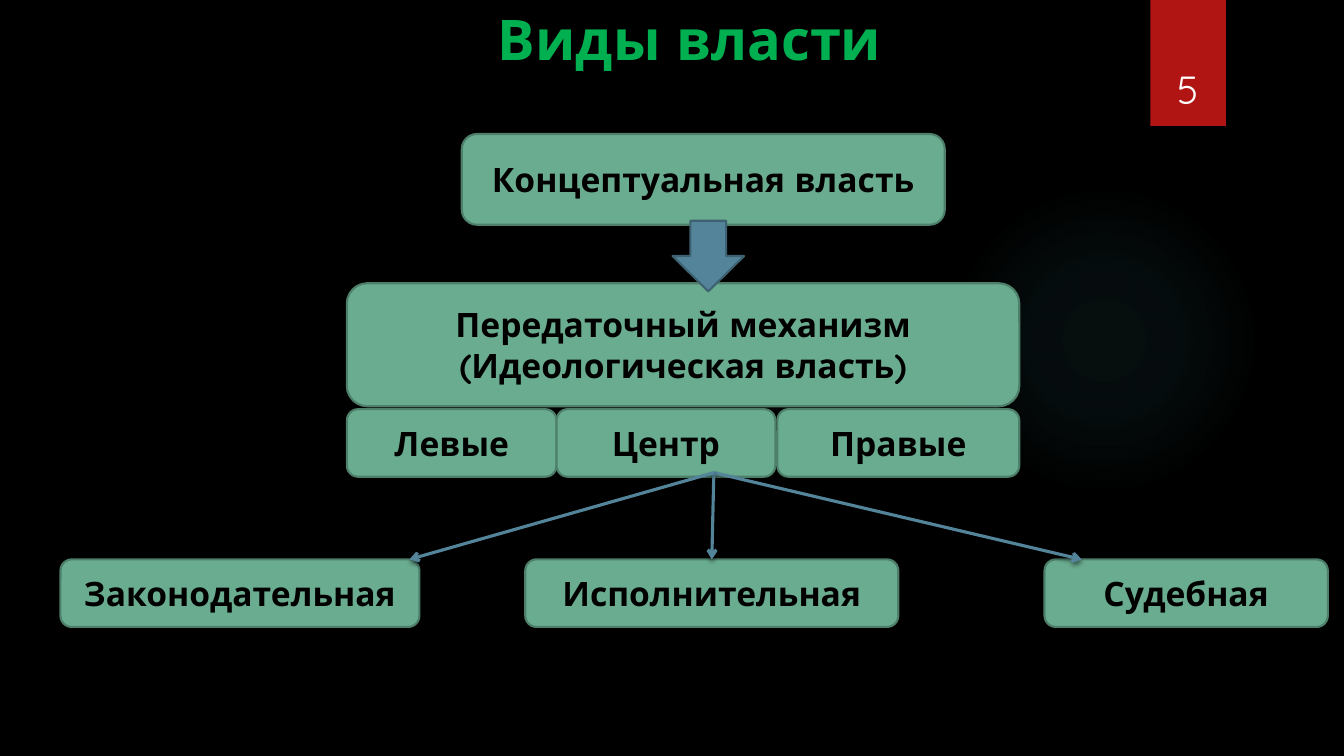
from lxml.etree import SubElement
from pptx import Presentation
from pptx.dml.color import RGBColor
from pptx.enum.shapes import MSO_CONNECTOR, MSO_SHAPE
from pptx.enum.text import MSO_ANCHOR, MSO_AUTO_SIZE, PP_ALIGN
from pptx.oxml import parse_xml
from pptx.oxml.ns import nsdecls, qn
from pptx.util import Inches, Pt

COLORS = {
    "background": "000000", "glow": "50B9C1", "ribbon": "B01513",
    "box": "6AAC90", "box_line": "4E7F6B", "arrow": "54849A",
    "arrow_line": "3E6272", "title": "00B050", "dark": "000000",
    "light": "FFFFFF",
}
SHADOW = (
    f'<a:effectLst {nsdecls("a")}>'
    '<a:outerShdw blurRad="38100" dist="25400" dir="5400000" rotWithShape="0">'
    '<a:srgbClr val="000000"><a:alpha val="45000"/></a:srgbClr>'
    '</a:outerShdw></a:effectLst>'
)


def add_block(kind, place, fill, line=None):
    block = page.shapes.add_shape(kind, *map(Inches, place))
    block.shadow.inherit = False
    block.fill.solid()
    block.fill.fore_color.rgb = RGBColor.from_string(COLORS[fill])
    if line:
        block.line.color.rgb = RGBColor.from_string(COLORS[line])
        block.line.width = Pt(1.5)
    else:
        block.line.fill.background()
    return block


def write(box, text, size, color, bold=True, anchor=MSO_ANCHOR.MIDDLE):
    frame = box.text_frame
    frame.word_wrap = True
    frame.vertical_anchor = anchor
    para = frame.paragraphs[0]
    para.alignment = PP_ALIGN.CENTER
    span = para.add_run()
    span.text = text
    style = {"name": "Quicksand", "size": Pt(size), "bold": bold}
    for name, value in style.items():
        setattr(span.font, name, value)
    span.font.color.rgb = RGBColor.from_string(COLORS[color])


deck = Presentation()
deck.slide_width, deck.slide_height = Inches(13.33), Inches(7.5)
page = deck.slides.add_slide(deck.slide_layouts[6])
page.background.fill.solid()
page.background.fill.fore_color.rgb = RGBColor.from_string(COLORS["background"])

# Background glow and page number ribbon
glow = add_block(MSO_SHAPE.OVAL, (9.41, 1.83, 3.08, 3.08), "glow")
stops = "".join(
    f'<a:gs pos="{position * 1000}"><a:srgbClr val="{COLORS["glow"]}">'
    f'<a:alpha val="{opacity * 1000}"/></a:srgbClr></a:gs>'
    for position, opacity in ((0, 7), (36, 6), (69, 0))
)
gradient = parse_xml(
    f'<a:gradFill {nsdecls("a")} rotWithShape="1"><a:gsLst>{stops}</a:gsLst>'
    '<a:path path="circle">'
    '<a:fillToRect l="50000" t="50000" r="50000" b="50000"/></a:path></a:gradFill>'
)
glow_properties = glow.element.spPr
glow_properties.replace(glow_properties.find(qn("a:solidFill")), gradient)

ribbon = add_block(MSO_SHAPE.RECTANGLE, (11.41, 0, 0.75, 1.25), "ribbon")
ribbon_properties = ribbon.element.spPr
ribbon_properties.replace(
    ribbon_properties.find(qn("a:effectLst")), parse_xml(SHADOW))

# Kinds of power, from the top level down
powers = [
    ("Концептуальная власть", 4.58, 1.33, 4.79, 0.9),
    ("Передаточный механизм (Идеологическая власть)", 3.44, 2.81, 6.67, 1.22),
    ("Левые", 3.44, 4.06, 2.08, 0.67),
    ("Центр", 5.52, 4.06, 2.17, 0.67),
    ("Правые", 7.71, 4.06, 2.4, 0.67),
    ("Законодательная", 0.6, 5.55, 3.56, 0.67),
    ("Исполнительная", 5.21, 5.55, 3.7, 0.67),
    ("Судебная", 10.36, 5.55, 2.81, 0.67),
]
boxes = {}
for label, *place in powers:
    boxes[label] = add_block(
        MSO_SHAPE.FLOWCHART_ALTERNATE_PROCESS, place, "box", "box_line")
    write(boxes[label], label, 24, "dark")

add_block(MSO_SHAPE.DOWN_ARROW, (6.67, 2.19, 0.71, 0.7), "arrow", "arrow_line")

# Arrows to the three branches
for end_x, target in ((10.73, None), (7.08, "Исполнительная"), (4.06, None)):
    branch = page.shapes.add_connector(
        MSO_CONNECTOR.STRAIGHT,
        Inches(7.08), Inches(4.69), Inches(end_x), Inches(5.55))
    if target:
        branch.end_connect(boxes[target], 0)
    branch.line.color.rgb = RGBColor.from_string(COLORS["arrow"])
    branch.line.width = Pt(2.25)
    SubElement(branch.get_or_add_ln(), qn("a:tailEnd"), type="arrow")
    branch.element.spPr.append(parse_xml(SHADOW))

title = page.shapes.add_textbox(Inches(0.34), Inches(0), Inches(13), Inches(0.77))
write(title, "Виды власти", 40, "title", anchor=MSO_ANCHOR.TOP)
title.text_frame.auto_size = MSO_AUTO_SIZE.SHAPE_TO_FIT_TEXT

number = page.shapes.add_textbox(
    Inches(11.32), Inches(0.32), Inches(0.92), Inches(0.84))
write(number, "5", 28, "light", bold=False, anchor=MSO_ANCHOR.BOTTOM)

deck.save("out.pptx")
